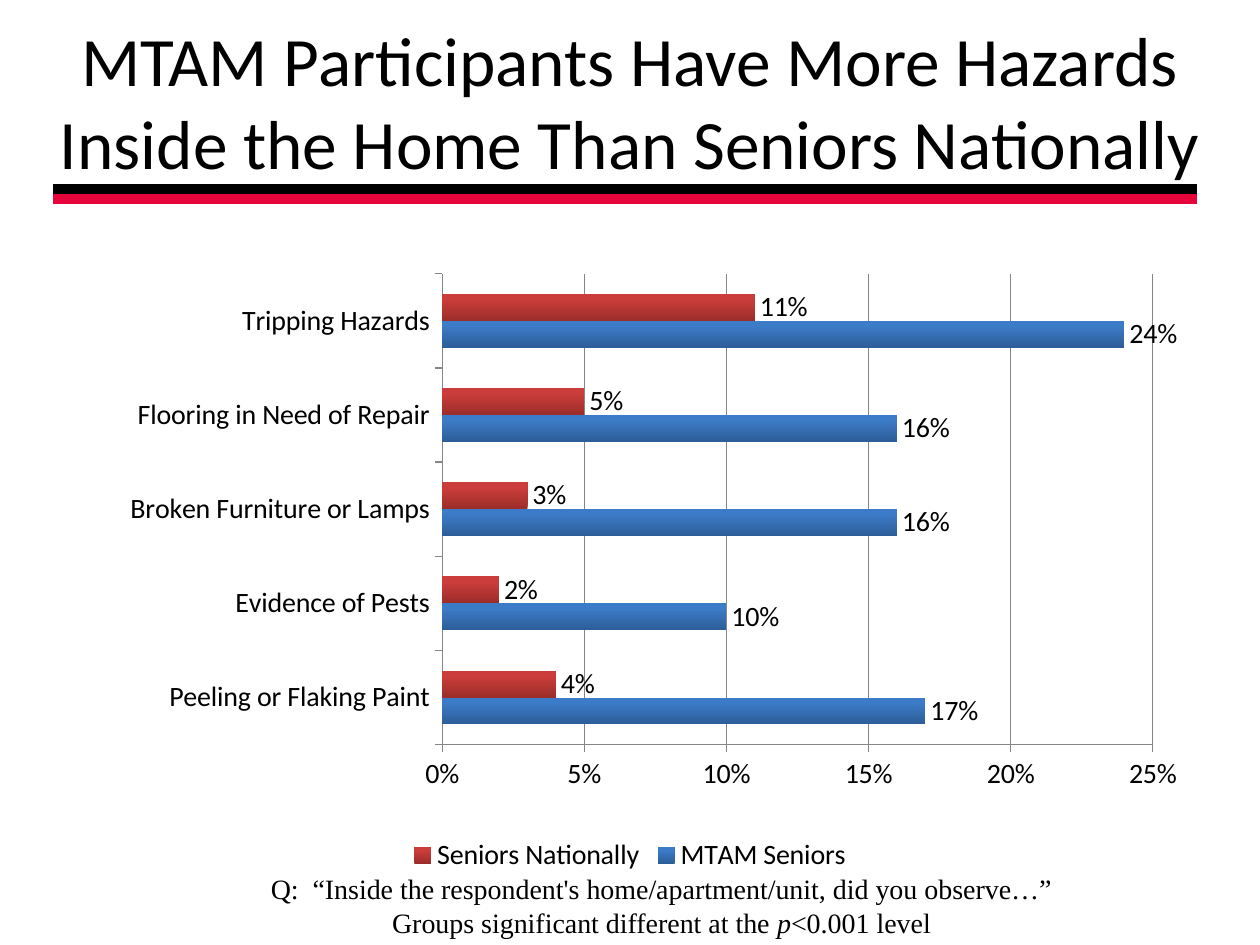
from lxml import etree
from pptx import Presentation
from pptx.chart.data import CategoryChartData
from pptx.dml.color import RGBColor
from pptx.enum.chart import XL_CHART_TYPE, XL_LABEL_POSITION, XL_LEGEND_POSITION, XL_TICK_MARK
from pptx.enum.shapes import MSO_CONNECTOR
from pptx.enum.text import MSO_ANCHOR, PP_ALIGN
from pptx.oxml import parse_xml
from pptx.oxml.ns import nsdecls, qn
from pptx.util import Inches, Pt

BARS = XL_CHART_TYPE.BAR_CLUSTERED
OUT_END = XL_LABEL_POSITION.OUTSIDE_END
BOTTOM = XL_LEGEND_POSITION.BOTTOM
TICK_OUT = XL_TICK_MARK.OUTSIDE
STRAIGHT = MSO_CONNECTOR.STRAIGHT
MIDDLE = MSO_ANCHOR.MIDDLE
CENTER = PP_ALIGN.CENTER

BLACK, RED, GREY = "000000", "E5053A", "868686"
HAZARDS = ["Peeling or Flaking Paint", "Evidence of Pests", "Broken Furniture or Lamps",
           "Flooring in Need of Repair", "Tripping Hazards"]
# name, values, dark and light end of the bar gradient
GROUPS = [
    ("MTAM Seniors", [0.17, 0.1, 0.16, 0.16, 0.24], "2C5D98", "3C7BC7"),
    ("Seniors Nationally", [0.04, 0.02, 0.03, 0.05, 0.11], "9B2D2A", "CB3D3A"),
]


def color(code):
    return RGBColor.from_string(code)


def style(font, size, name="Calibri"):
    font.size = Pt(size)
    font.name = name
    font.color.rgb = color(BLACK)


def add_title(slide, box):
    title = slide.shapes.title
    title.left, title.top, title.width, title.height = map(Inches, box)
    frame = title.text_frame
    frame.text = "MTAM Participants Have More Hazards Inside the Home Than Seniors Nationally"
    frame.vertical_anchor = MIDDLE
    para = frame.paragraphs[0]
    para.alignment = CENTER
    style(para.runs[0].font, 39.6)


def add_rules(slide, left, top, width):
    for row, code in enumerate([BLACK, RED]):
        y = Inches(top + row * 0.08)
        rule = slide.shapes.add_connector(STRAIGHT, Inches(left), y, Inches(left + width), y)
        rule.line.color.rgb = color(code)
        rule.line.width = Pt(6)
        etree.SubElement(rule._element.spPr, qn("a:effectLst"))


def set_plot(chart, x, y, w, h):
    """Fix the inner plot area, in fractions of the chart."""
    area = chart._chartSpace.chart.plotArea
    for old in area.findall(qn("c:layout")):
        area.remove(old)
    parts = "".join(f'<c:{tag} val="{val}"/>' for tag, val in [
        ("layoutTarget", "inner"), ("xMode", "edge"), ("yMode", "edge"),
        ("x", x), ("y", y), ("w", w), ("h", h)])
    area.insert(0, parse_xml(f'<c:layout {nsdecls("c")}><c:manualLayout>{parts}'
                             '</c:manualLayout></c:layout>'))


def add_bars(slide, box):
    data = CategoryChartData(number_format="0%")
    data.categories = HAZARDS
    for name, vals, *_ in GROUPS:
        data.add_series(name, vals)
    chart = slide.shapes.add_chart(BARS, *map(Inches, box), data).chart
    style(chart.font, 16)
    chart.has_title = False
    set_plot(chart, 0.351, 0.031, 0.564, 0.755)

    # Legend
    chart.has_legend = True
    chart.legend.position = BOTTOM
    chart.legend.include_in_layout = False

    # Axes
    values = chart.value_axis
    values.minimum_scale, values.maximum_scale, values.major_unit = 0, 0.25, 0.05
    values.tick_labels.number_format = "0%"
    values.tick_labels.number_format_is_linked = False
    values.has_major_gridlines = True
    for axis in (values, chart.category_axis):
        axis.major_tick_mark = TICK_OUT
        axis.format.line.color.rgb = color(GREY)
    values.major_gridlines.format.line.color.rgb = color(GREY)

    # Bars and labels
    plot = chart.plots[0]
    plot.gap_width, plot.overlap = 150, 0
    plot.vary_by_categories = False
    for series, (_, _, dark, light) in zip(plot.series, GROUPS):
        fill = series.format.fill
        fill.gradient()
        fill.gradient_angle = 90
        for stop, code in zip(fill.gradient_stops, (dark, light)):
            stop.color.rgb = color(code)
        fill.gradient_stops[1].position = 0.8
        series.invert_if_negative = False
        labels = series.data_labels
        labels.show_value = True
        labels.number_format = "0%"
        labels.number_format_is_linked = False
        labels.position = OUT_END
        style(labels.font, 16)


def add_note(slide, box):
    frame = slide.shapes.add_textbox(*map(Inches, box)).text_frame
    frame.word_wrap = True
    lines = [
        ["Q:  “Inside the respondent's home/apartment/unit, did you observe…”"],
        ["Groups significant different at the ", "p", "<0.001 level"],
    ]
    for row, parts in enumerate(lines):
        para = frame.add_paragraph() if row else frame.paragraphs[0]
        para.alignment = CENTER
        for part in parts:
            run = para.add_run()
            run.text = part
            style(run.font, 16, "Times New Roman")
            run.font.italic = part == "p"


def main():
    deck = Presentation()
    deck.slide_width, deck.slide_height = Inches(10), Inches(7.5)
    slide = deck.slides.add_slide(deck.slide_layouts[5])
    add_rules(slide, 0.42, 1.5, 9.08)
    add_title(slide, (0, 0.17, 10, 1.25))
    add_bars(slide, (0, 2.02, 10, 4.95))
    add_note(slide, (0.5, 6.87, 9.5, 0.63))
    deck.save("out.pptx")


if __name__ == "__main__":
    main()
